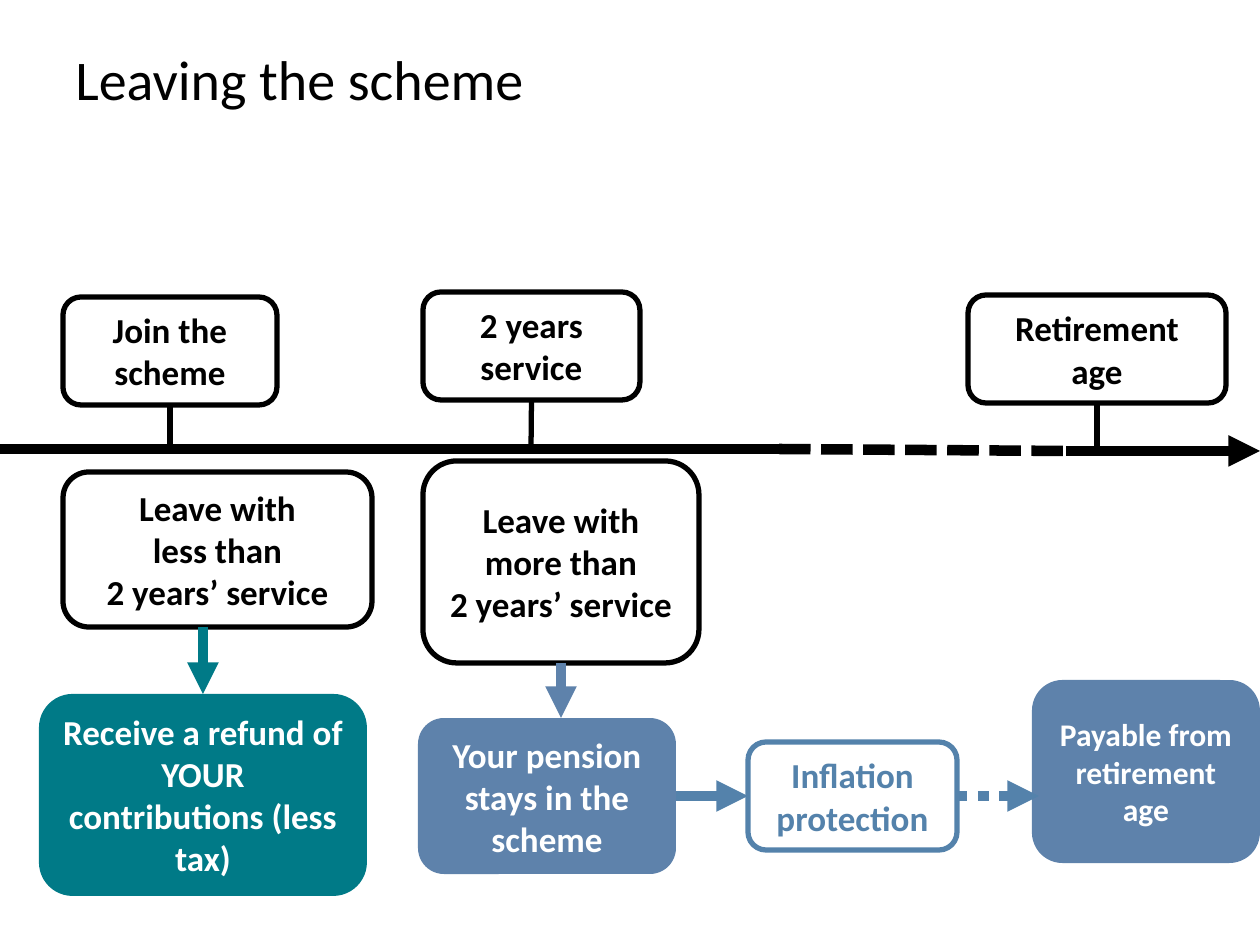
import pptx
import pptx.dml.color
import pptx.enum.dml
import pptx.enum.shapes
import pptx.enum.text
import pptx.oxml.ns
import pptx.util
import lxml.etree

PX = 914400 / 126
FONT = "Calibri"
COLORS = {"black": "000000", "white": "FFFFFF", "teal": "007A87",
          "slate": "5E82AB", "blue": "5482AB"}
DASH = pptx.enum.dml.MSO_LINE_DASH_STYLE
TOP, LEFT, BOTTOM, RIGHT = range(4)
AXIS_Y = 451


def px(*values):
    """Turn pixel lengths into EMU."""
    return [pptx.util.Emu(round(v * PX)) for v in values]


def rgb(name):
    """Look up a named colour."""
    return pptx.dml.color.RGBColor.from_string(COLORS[name])


def set_text(tf, text, size, color, bold=False, align=None):
    """Fill a text frame and format its runs."""
    tf.word_wrap = True
    tf.text = text
    for p in tf.paragraphs:
        p.alignment = align
        for r in p.runs:
            r.font.name = FONT
            r.font.size = pptx.util.Pt(size)
            r.font.bold = bold
            r.font.color.rgb = rgb(color)


def add_title(slide, text):
    """Add the slide heading."""
    tb = slide.shapes.add_textbox(*px(63, 38, 1134, 157))
    set_text(tb.text_frame, text, 32, "black")


def add_box(slide, bounds, text, fill="white", line=None, color="white", size=20):
    """Add a rounded box with centred bold text."""
    sp = slide.shapes.add_shape(
        pptx.enum.shapes.MSO_SHAPE.ROUNDED_RECTANGLE, *px(*bounds))
    sp.shadow.inherit = False
    sp.fill.solid()
    sp.fill.fore_color.rgb = rgb(fill)
    if line:
        sp.line.color.rgb = rgb(line)
        sp.line.width = pptx.util.Pt(3)
    else:
        sp.line.fill.background()
    sp.text_frame.vertical_anchor = pptx.enum.text.MSO_ANCHOR.MIDDLE
    set_text(sp.text_frame, text, size, color, True,
             pptx.enum.text.PP_ALIGN.CENTER)
    return sp


def add_line(slide, ends, color="black", width=6, dash=None, arrow=False,
             begin=None, end=None):
    """Add a straight line, joined to (shape, side) pairs where given."""
    cx = slide.shapes.add_connector(
        pptx.enum.shapes.MSO_CONNECTOR.STRAIGHT, *px(*ends))
    if begin:
        cx.begin_connect(*begin)
    if end:
        cx.end_connect(*end)
    cx.line.color.rgb = rgb(color)
    cx.line.width = pptx.util.Pt(width)
    if dash:
        cx.line.dash_style = dash
    if arrow:
        ln = cx.line._get_or_add_ln()
        lxml.etree.SubElement(ln, pptx.oxml.ns.qn("a:tailEnd"), type="triangle")
    lxml.etree.SubElement(cx._element.spPr, pptx.oxml.ns.qn("a:effectLst"))


def add_axis(slide):
    """Draw the solid, dashed and arrowed parts of the time axis."""
    add_line(slide, (0, 449, 779, 449))
    add_line(slide, (779, 449, 1066, AXIS_Y), dash=DASH.SQUARE_DOT)
    add_line(slide, (1066, AXIS_Y, 1260, AXIS_Y), arrow=True)


def add_milestone(slide, left, top, width, text):
    """Add a box above the axis with its stem."""
    height = 108
    sp = add_box(slide, (left, top, width, height), text,
                 line="black", color="black")
    x = left + width // 2
    add_line(slide, (x, top + height, x, AXIS_Y), width=3, begin=(sp, BOTTOM))


def add_refund_route(slide):
    """Show what happens on leaving early."""
    add_box(slide, (63, 472, 309, 155),
            "Leave with\nless than\n2 years’ service", line="black", color="black")
    refund = add_box(slide, (39, 694, 328, 202),
                     "Receive a refund of YOUR contributions (less tax)", "teal")
    add_line(slide, (203, 627, 203, 694), "teal", arrow=True, end=(refund, TOP))


def add_pension_route(slide):
    """Show what happens on leaving after two years."""
    leave = add_box(slide, (423, 461, 276, 202),
                    "Leave with\nmore than\n2 years’ service",
                    line="black", color="black")
    pension = add_box(slide, (418, 718, 258, 156),
                      "Your pension stays in the scheme", "slate")
    protection = add_box(slide, (748, 742, 209, 108), "Inflation protection",
                         line="blue", color="blue")
    add_box(slide, (1032, 680, 228, 183), "Payable from retirement age",
            "slate", size=18)
    add_line(slide, (561, 663, 561, 718), "slate", arrow=True,
             begin=(leave, BOTTOM))
    add_line(slide, (676, 796, 748, 796), "blue", arrow=True,
             begin=(pension, RIGHT), end=(protection, LEFT))
    add_line(slide, (957, 796, 1039, 796), "blue", dash=DASH.ROUND_DOT,
             arrow=True, begin=(protection, RIGHT))


def main():
    """Build and save the slide."""
    prs = pptx.Presentation()
    prs.slide_width, prs.slide_height = px(1260, 945)
    slide = prs.slides.add_slide(prs.slide_layouts[6])
    add_title(slide, "Leaving the scheme")
    add_axis(slide)
    for milestone in [(63, 297, 214, "Join the scheme"),
                      (423, 292, 217, "2 years service"),
                      (968, 295, 258, "Retirement age")]:
        add_milestone(slide, *milestone)
    add_refund_route(slide)
    add_pension_route(slide)
    prs.save("out.pptx")


if __name__ == "__main__":
    main()
